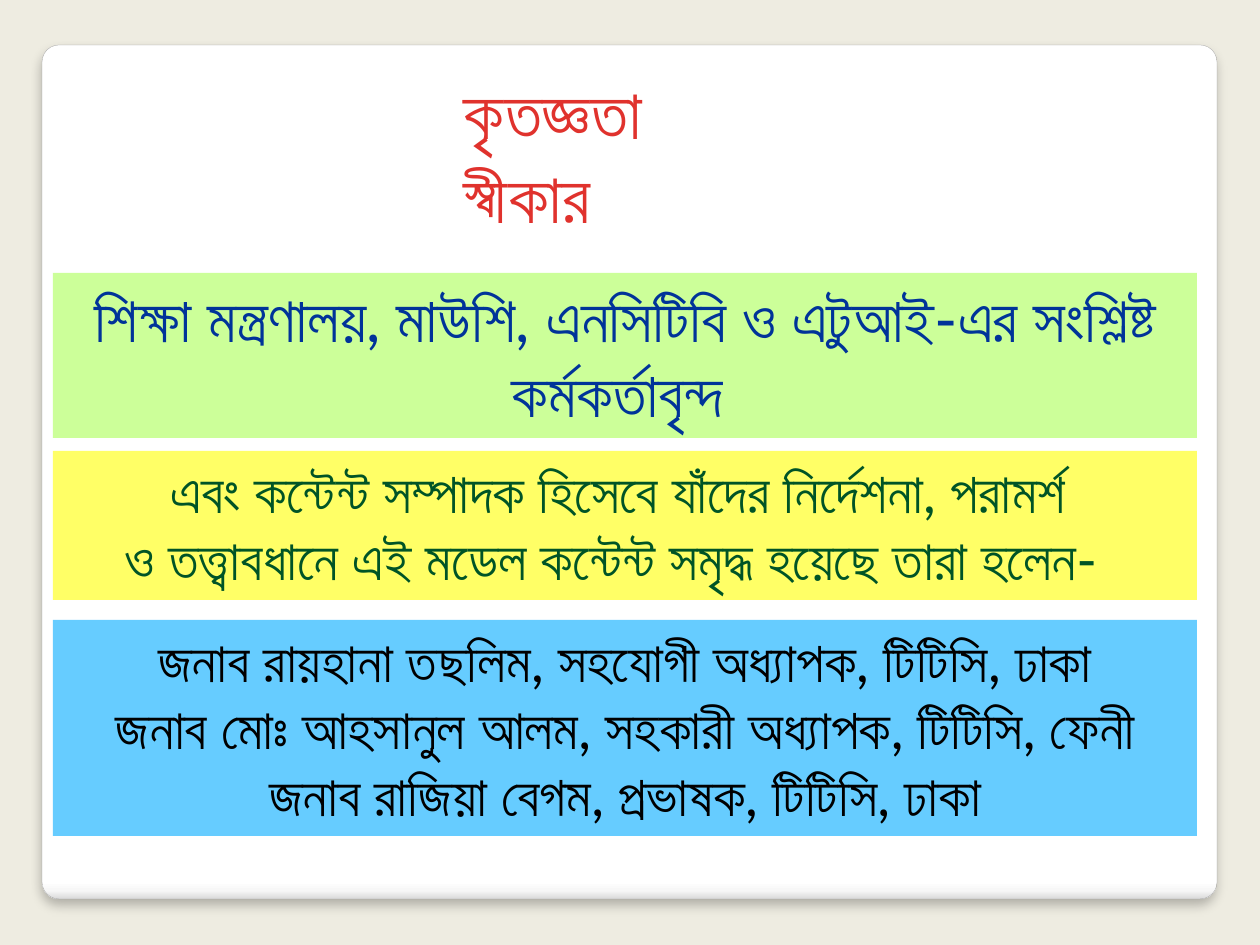
from lxml import etree
from pptx import Presentation
from pptx import util as u
from pptx.dml.color import RGBColor
from pptx.enum import shapes, text
from pptx.oxml import parse_xml
from pptx.oxml.ns import nsdecls, qn

PX_PER_INCH = 126
FONT = "Lato"


def px(length):
    return u.Inches(length / PX_PER_INCH)


def color(value):
    return RGBColor.from_string(value)


def add_panel(page, left, top, width, height):
    """Rounded white card with a shaded lower edge and a soft shadow."""
    panel = page.shapes.add_shape(
        shapes.MSO_SHAPE.ROUNDED_RECTANGLE, px(left), px(top), px(width), px(height))
    panel.adjustments[0] = 0.02
    panel.line.color.rgb = color("A4A4A4")
    panel.line.width = u.Pt(0.16)

    # Four-stop vertical gradient
    panel.fill.gradient()
    panel.fill.gradient_angle = 270
    stops = panel._element.spPr.find(qn("a:gradFill")).find(qn("a:gsLst"))
    for stop in list(stops):
        stops.remove(stop)
    for percent, value in ((0, "FFFFFF"), (98, "FFFFFF"), (99, "F7F7F7"), (100, "DADADA")):
        stop = etree.SubElement(stops, qn("a:gs"), pos=str(percent * 1000))
        etree.SubElement(stop, qn("a:srgbClr"), val=value)

    # Shadow falling straight down
    panel._element.spPr.append(parse_xml(
        f'<a:effectLst {nsdecls("a")}>'
        f'<a:outerShdw blurRad="{u.Pt(6)}" dist="{u.Pt(4)}" dir="5400000" rotWithShape="0">'
        '<a:srgbClr val="000000"><a:alpha val="25000"/></a:srgbClr>'
        '</a:outerShdw></a:effectLst>'))


def write_lines(box, lines, size, ink, align):
    frame = box.text_frame
    frame.word_wrap = True
    frame.auto_size = text.MSO_AUTO_SIZE.SHAPE_TO_FIT_TEXT
    frame.vertical_anchor = text.MSO_ANCHOR.TOP
    for index, line in enumerate(lines):
        para = frame.paragraphs[0] if index == 0 else frame.add_paragraph()
        para.text = line
        para.alignment = align
        para.font.name = FONT
        para.font.size = u.Pt(size)
        para.font.color.rgb = color(ink)


def add_title(page, left, top, width, height):
    box = page.shapes.add_textbox(px(left), px(top), px(width), px(height))
    write_lines(box, ["কৃতজ্ঞতা স্বীকার"], 40, "E0322D", text.PP_ALIGN.LEFT)
    para = box.text_frame.paragraphs[0]
    para.font.bold = True
    para.runs[0].font._element.set("spc", "50")


def add_band(page, left, top, width, height, fill, ink, size, lines):
    band = page.shapes.add_shape(
        shapes.MSO_SHAPE.RECTANGLE, px(left), px(top), px(width), px(height))
    band.shadow.inherit = False
    band.fill.solid()
    band.fill.fore_color.rgb = color(fill)
    band.line.fill.background()
    write_lines(band, lines, size, ink, text.PP_ALIGN.CENTER)


# Top, height, fill, ink, text size, lines
BANDS = [
    (273, 165, "CCFF99", "003399", 36, [
        "শিক্ষা মন্ত্রণালয়, মাউশি, এনসিটিবি ও এটুআই-এর সংশ্লিষ্ট কর্মকর্তাবৃন্দ "]),
    (451, 149, "FFFF66", "005426", 32, [
        "এবং কন্টেন্ট সম্পাদক হিসেবে যাঁদের নির্দেশনা, পরামর্শ ",
        "ও তত্ত্বাবধানে এই মডেল কন্টেন্ট সমৃদ্ধ হয়েছে তারা হলেন-  "]),
    (620, 216, "66CCFF", "000000", 32, [
        "জনাব রায়হানা তছলিম, সহযোগী অধ্যাপক, টিটিসি, ঢাকা",
        "জনাব মোঃ আহসানুল আলম, সহকারী অধ্যাপক, টিটিসি, ফেনী",
        "জনাব রাজিয়া বেগম, প্রভাষক, টিটিসি, ঢাকা"]),
]


def main():
    deck = Presentation()
    deck.slide_width, deck.slide_height = px(1260), px(945)
    page = deck.slides.add_slide(deck.slide_layouts[6])
    page.background.fill.solid()
    page.background.fill.fore_color.rgb = color("EEECE1")

    add_panel(page, 42, 45, 1175, 854)
    add_title(page, 451, 63, 325, 184)
    for top, height, fill, ink, size, lines in BANDS:
        add_band(page, 53, top, 1144, height, fill, ink, size, lines)

    deck.save("out.pptx")


if __name__ == "__main__":
    main()
